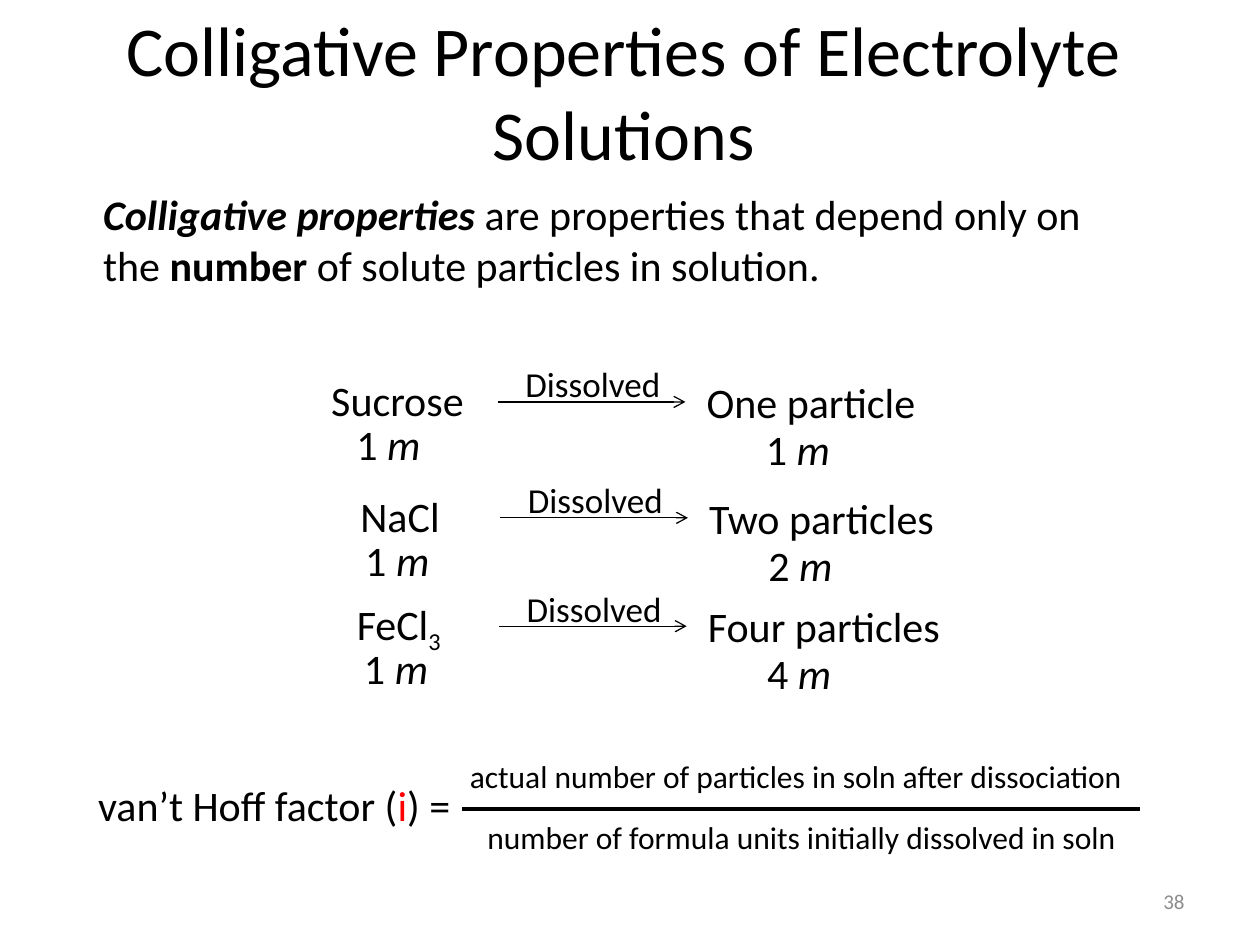
import pptx
import pptx.util
import pptx.dml.color
import pptx.enum.shapes
import pptx.enum.text
import lxml.etree
from pptx.util import Inches

COLORS = {"text": "000000", "factor": "FF0000", "page": "8C8C8C"}
ALIGN = pptx.enum.text.PP_ALIGN
ANCHOR = pptx.enum.text.MSO_ANCHOR
DRAWING = "{http://schemas.openxmlformats.org/drawingml/2006/main}"


def add_text(shapes, box, pieces, size=24, align=ALIGN.LEFT, color="text", anchor=ANCHOR.TOP):
    """Place one paragraph made of (wording, style) pieces in a box."""
    frame = shapes.add_textbox(*map(Inches, box)).text_frame
    frame.word_wrap = True
    frame.vertical_anchor = anchor
    paragraph = frame.paragraphs[0]
    paragraph.alignment = align
    for wording, style in pieces:
        run = paragraph.add_run()
        run.text = wording
        run.font.name = "Calibri"
        run.font.size = pptx.util.Pt(size)
        run.font.bold = "bold" in style
        run.font.italic = "italic" in style
        shade = COLORS["factor" if "factor" in style else color]
        run.font.color.rgb = pptx.dml.color.RGBColor.from_string(shade)
        if "subscript" in style:
            run.font._element.set("baseline", "-25000")


def add_rule(shapes, left, top, width, weight, arrow=False):
    """Draw a horizontal line, with an arrowhead at its right end if asked."""
    rule = shapes.add_connector(
        pptx.enum.shapes.MSO_CONNECTOR.STRAIGHT,
        Inches(left), Inches(top), Inches(left + width), Inches(top))
    rule.line.width = pptx.util.Pt(weight)
    rule.line.color.rgb = pptx.dml.color.RGBColor.from_string(COLORS["text"])
    if arrow:
        lxml.etree.SubElement(rule.line._get_or_add_ln(), DRAWING + "tailEnd", type="arrow")
    lxml.etree.SubElement(rule._element.spPr, DRAWING + "effectLst")


def add_heading(shapes, box):
    """Place the title."""
    add_text(shapes, box, [("Colligative Properties of Electrolyte Solutions", "")],
             40, ALIGN.CENTER)


def add_definition(shapes, box):
    """Place the definition of colligative properties."""
    add_text(shapes, box, [
        ("Colligative properties", "bold italic"),
        (" are properties that depend only on the ", ""),
        ("number", "bold"),
        (" of solute particles in solution.", "")])


def add_dissolution(shapes, left, top, solute, solute_inset, particles, molality):
    """Place one solute, its arrow and the particles it yields."""
    add_text(shapes, (left, top, 1.37, 0.5), solute, align=ALIGN.CENTER)
    add_rule(shapes, left + 1.48, top + 0.27, 1.49, 0.75, arrow=True)
    add_text(shapes, (left + 1.47, top - 0.09, 1.53, 0.44), [("Dissolved", "")],
             20, ALIGN.CENTER)
    add_text(shapes, (left + 3.04, top + 0.02, 2.16, 0.5), [(particles, "")])
    for inset, drop, amount in ((3.51, 0.39, molality), (solute_inset, 0.35, 1)):
        add_text(shapes, (left + inset, top + drop, 0.81, 0.5),
                 [(f"{amount} ", ""), ("m", "italic")])


def add_vant_hoff(shapes, box):
    """Place the van't Hoff factor and its fraction."""
    left, top, width, height = box
    add_text(shapes, (left, top + 0.18, 4.19, 0.5),
             [("van’t Hoff factor (", ""), ("i", "factor"), (") =", "")])
    fraction = shapes.add_group_shape().shapes
    add_text(fraction, (left + 2.95, top, 5.45, 0.4),
             [("actual number of particles in soln after dissociation", "")], 18)
    add_text(fraction, (left + 3.09, top + height - 0.4, 5.25, 0.4),
             [("number of formula units initially dissolved in soln", "")], 18)
    add_rule(fraction, left + 2.99, top + 0.46, width - 2.99, 2.25)


def add_page_number(shapes, box):
    """Place the slide number."""
    add_text(shapes, box, [("38", "")], 12, ALIGN.RIGHT, "page", ANCHOR.MIDDLE)


def main():
    """Build and save the slide."""
    deck = pptx.Presentation()
    deck.slide_width, deck.slide_height = Inches(10), Inches(7.5)
    shapes = deck.slides.add_slide(deck.slide_layouts[6]).shapes
    add_page_number(shapes, (7.17, 6.95, 2.33, 0.4))
    add_heading(shapes, (0.66, 0, 8.58, 1.45))
    add_definition(shapes, (0.72, 1.45, 8.34, 0.91))
    dissolutions = (
        (2.47, 2.92, [("Sucrose", "")], 0.26, "One particle", 1),
        (2.49, 3.84, [("NaCl", "")], 0.31, "Two particles", 2),
        (2.48, 4.7, [("FeCl", ""), ("3", "subscript")], 0.31, "Four particles", 4))
    for dissolution in dissolutions:
        add_dissolution(shapes, *dissolution)
    add_vant_hoff(shapes, (0.68, 5.96, 8.37, 0.88))
    deck.save("out.pptx")


if __name__ == "__main__":
    main()
